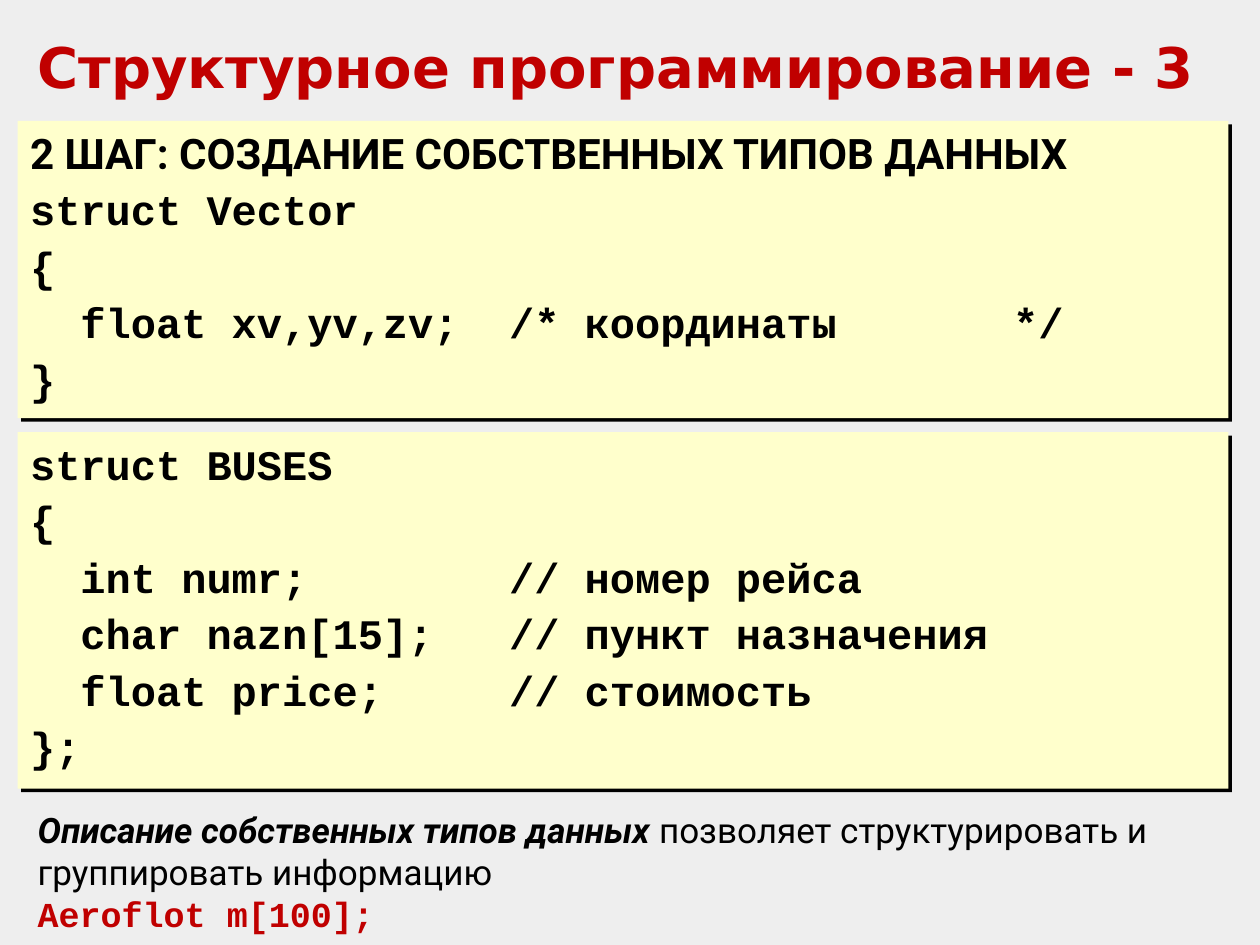
from dataclasses import dataclass

from lxml import etree
from pptx import Presentation
from pptx import util as u
from pptx.dml.color import RGBColor
from pptx.enum import shapes, text
from pptx.oxml import ns


@dataclass(frozen=True)
class Theme:
    background: str = "EEEEEE"
    panel: str = "FFFFCC"
    ink: str = "000000"
    accent: str = "C00000"
    title_font: str = "DejaVu Sans"
    body_font: str = "Roboto"
    code_font: str = "Courier New"
    title_size: int = 32
    code_size: int = 24
    note_size: int = 20
    line_gap: float = 3.5


THEME = Theme()

VECTOR_HEADING = "2 ШАГ: СОЗДАНИЕ СОБСТВЕННЫХ ТИПОВ ДАННЫХ"
VECTOR_CODE = """struct Vector
{
  float xv,yv,zv;  /* координаты       */
}"""
BUSES_CODE = """struct BUSES
{
  int numr;        // номер рейса
  char nazn[15];   // пункт назначения
  float price;     // стоимость
};"""


def style(font, name, size, color=THEME.ink, bold=False):
    font.name = name
    font.size = u.Pt(size)
    font.bold = bold
    font.color.rgb = RGBColor.from_string(color)


def place(shape, box):
    shape.left, shape.top, shape.width, shape.height = map(u.Inches, box)


def add_hard_shadow(shape):
    shape.shadow.inherit = False
    effects = shape._element.spPr.find(ns.qn("a:effectLst"))
    shadow = etree.SubElement(
        effects, ns.qn("a:outerShdw"), blurRad="0", dist=str(u.Pt(2.8)),
        dir=str(45 * 60000), algn="ctr", rotWithShape="0")
    etree.SubElement(shadow, ns.qn("a:srgbClr"), val=THEME.ink)


def add_title(page, box, wording):
    title = page.shapes.title
    place(title, box)
    frame = title.text_frame
    frame.auto_size = text.MSO_AUTO_SIZE.NONE
    frame.vertical_anchor = text.MSO_ANCHOR.TOP
    para = frame.paragraphs[0]
    para.text = wording
    para.alignment = text.PP_ALIGN.LEFT
    style(para.font, THEME.title_font, THEME.title_size, THEME.accent, True)


def add_code_panel(page, box, code, heading=None):
    panel = page.shapes.add_shape(
        shapes.MSO_SHAPE.RECTANGLE, *map(u.Inches, box))
    panel.fill.solid()
    panel.fill.fore_color.rgb = RGBColor.from_string(THEME.panel)
    panel.line.fill.background()
    add_hard_shadow(panel)

    frame = panel.text_frame
    frame.word_wrap = True
    frame.vertical_anchor = text.MSO_ANCHOR.TOP
    lines = [(line, THEME.code_font) for line in code.splitlines()]
    if heading:
        lines.insert(0, (heading, THEME.body_font))
    for index, (line, font_name) in enumerate(lines):
        para = frame.add_paragraph() if index else frame.paragraphs[0]
        para.text = line
        para.alignment = text.PP_ALIGN.LEFT
        para.space_before = u.Pt(THEME.line_gap if index else 0)
        style(para.font, font_name, THEME.code_size, bold=True)


def add_note(page, box, term, explanation, code):
    frame = page.shapes.add_textbox(*map(u.Inches, box)).text_frame
    frame.word_wrap = True
    para = frame.paragraphs[0]
    for wording, strong in ((term, True), (explanation, False)):
        span = para.add_run()
        span.text = wording
        style(span.font, THEME.body_font, THEME.note_size, bold=strong)
        span.font.italic = strong
    para = frame.add_paragraph()
    para.text = code
    style(para.font, THEME.code_font, THEME.note_size, THEME.accent, True)


def main():
    deck = Presentation()
    deck.slide_width, deck.slide_height = u.Inches(10), u.Inches(7.5)
    page = deck.slides.add_slide(deck.slide_layouts.get_by_name("Title Only"))
    page.background.fill.solid()
    page.background.fill.fore_color.rgb = RGBColor.from_string(THEME.background)

    add_title(page, (0.2, 0.21, 9.61, 0.64), "Структурное программирование - 3")
    add_code_panel(page, (0.14, 0.96, 9.61, 2.36), VECTOR_CODE, VECTOR_HEADING)
    add_code_panel(page, (0.14, 3.43, 9.61, 2.83), BUSES_CODE)
    add_note(page, (0.2, 6.37, 9.62, 1.11),
             "Описание собственных типов данных ",
             "позволяет структурировать и группировать информацию",
             "Aeroflot m[100];")
    deck.save("out.pptx")


if __name__ == "__main__":
    main()
